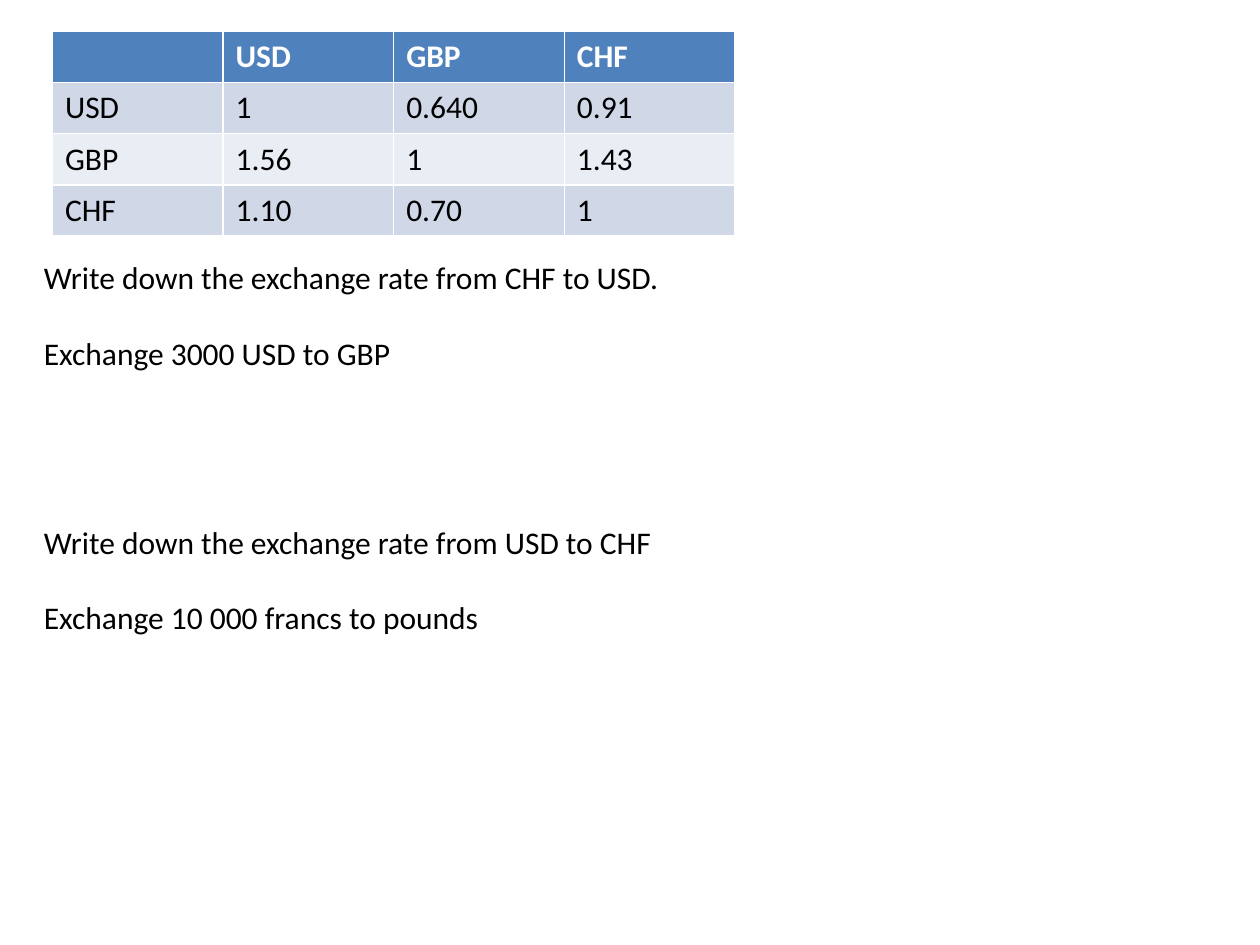
from dataclasses import dataclass

from pptx import Presentation
from pptx.dml.color import RGBColor
from pptx.util import Pt


@dataclass(frozen=True)
class Theme:
    """Colours, font and type size of the slide."""
    font: str = "Calibri"
    size: float = 18
    ink: str = "000000"
    header_ink: str = "FFFFFF"
    header_fill: str = "4F81BD"
    bands: tuple = ("D0D8E8", "E9EDF4")


THEME = Theme()
LINE_PITCH = 21.6
RATES = [
    ["", "USD", "GBP", "CHF"],
    ["USD", "1", "0.640", "0.91"],
    ["GBP", "1.56", "1", "1.43"],
    ["CHF", "1.10", "0.70", "1"],
]
QUESTIONS = [
    ("Write down the exchange rate from CHF to USD.", 0),
    ("Exchange 3000 USD to GBP", 1),
    ("Write down the exchange rate from USD to CHF", 4),
    ("Exchange 10 000 francs to pounds", 1),
]


def write_text(paragraph, text, *, color=THEME.ink, bold=False, space_before=0):
    """Put formatted text in a paragraph."""
    paragraph.space_before = Pt(space_before)
    paragraph.font.size = Pt(THEME.size)
    if text:
        run = paragraph.add_run()
        run.text = text
        run.font.name = THEME.font
        run.font.size = Pt(THEME.size)
        run.font.bold = bold
        run.font.color.rgb = RGBColor.from_string(color)


def add_rate_table(slide, left, top, width, height):
    """Place the exchange rate table in its box."""
    table = slide.shapes.add_table(
        len(RATES), len(RATES[0]), Pt(left), Pt(top), Pt(width), Pt(height)
    ).table
    for column in table.columns:
        column.width = Pt(width / len(RATES[0]))
    for row_index, values in enumerate(RATES):
        table.rows[row_index].height = Pt(height / len(RATES))
        header = row_index == 0
        fill = THEME.header_fill if header else THEME.bands[(row_index - 1) % 2]
        for column_index, value in enumerate(values):
            cell = table.cell(row_index, column_index)
            cell.fill.solid()
            cell.fill.fore_color.rgb = RGBColor.from_string(fill)
            write_text(cell.text_frame.paragraphs[0], value, bold=header,
                       color=THEME.header_ink if header else THEME.ink)


def add_questions(slide, left, top, width, height):
    """Place the questions, leaving room for the answers between them."""
    frame = slide.shapes.add_textbox(
        Pt(left), Pt(top), Pt(width), Pt(height)
    ).text_frame
    frame.word_wrap = True
    for index, (question, gap_lines) in enumerate(QUESTIONS):
        paragraph = frame.add_paragraph() if index else frame.paragraphs[0]
        write_text(paragraph, question, space_before=gap_lines * LINE_PITCH)


def main():
    """Build and save the presentation."""
    presentation = Presentation()
    presentation.slide_width, presentation.slide_height = Pt(720), Pt(540)
    slide = presentation.slides.add_slide(presentation.slide_layouts[6])
    add_rate_table(slide, 30, 18, 390, 116.8)
    add_questions(slide, 18, 144, 540, 225.4)
    presentation.save("out.pptx")


if __name__ == "__main__":
    main()
